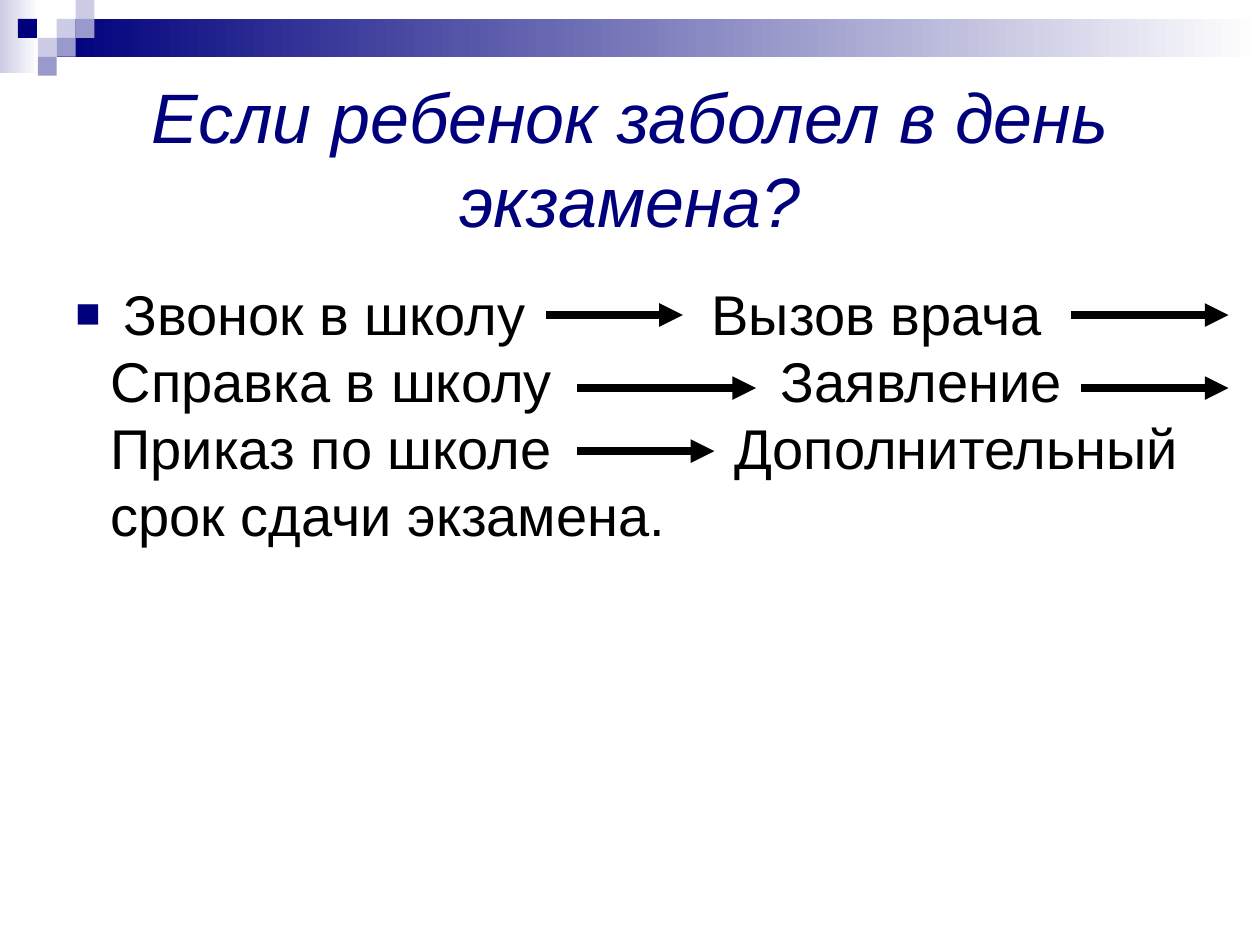
from dataclasses import dataclass

from lxml.etree import SubElement
from pptx import Presentation
from pptx.dml.color import RGBColor
from pptx.enum.shapes import MSO_CONNECTOR as CONN, MSO_SHAPE as SHAPE
from pptx.enum.text import MSO_ANCHOR as ANCHOR, PP_ALIGN as ALIGN
from pptx.oxml.ns import qn
from pptx.util import Inches, Pt

NAVY = RGBColor(0x00, 0x00, 0x7D)
LILAC = RGBColor(0xCC, 0xCC, 0xE6)
VIOLET = RGBColor(0x99, 0x99, 0xCC)
WHITE = RGBColor(0xFF, 0xFF, 0xFF)
BLACK = RGBColor(0x00, 0x00, 0x00)

TILE = 0.15
ROW_TOP = 2.17
ROW_PITCH = 0.53
INSET = 0.1
MARGIN = 0.88


@dataclass
class Step:
    text: str
    x: float
    row: int
    width: float = 4.0
    margin: float = 0
    indent: float = 0
    bullet: bool = False


@dataclass
class Arrow:
    start: float
    end: float
    y: float


STEPS = [
    Step("Звонок в школу", 0.6, 0, margin=0.38, indent=-0.38, bullet=True),
    Step("Вызов врача", 5.65, 0),
    Step("Справка в школу", MARGIN, 1),
    Step("Заявление", 6.2, 1),
    Step("Приказ по школе", MARGIN, 2),
    Step("Дополнительный срок сдачи экзамена.", MARGIN, 2,
         width=8.9, indent=5.83 - MARGIN),
]
ARROWS = [
    Arrow(4.33, 5.42, 2.5),
    Arrow(8.5, 9.75, 2.5),
    Arrow(4.58, 6, 3.08),
    Arrow(8.58, 9.75, 3.08),
    Arrow(4.58, 5.67, 3.58),
]
TILES = [
    (3, 1, LILAC), (4, 0, LILAC), (4, 1, VIOLET), (2, 2, LILAC),
    (0.95, 1, NAVY), (3, 2, VIOLET), (2, 3, VIOLET),
]


def add_rect(s, x: float, y: float, w: float, h: float,
             color: RGBColor, fade: bool = False):
    sp = s.shapes.add_shape(SHAPE.RECTANGLE, Inches(x), Inches(y),
                            Inches(w), Inches(h))
    sp.shadow.inherit = False
    sp.line.fill.background()
    if fade:
        sp.fill.gradient()
        sp.fill.gradient_angle = 0
        for stop, position, rgb in zip(sp.fill.gradient_stops, (0, 1),
                                       (color, WHITE)):
            stop.position = position
            stop.color.rgb = rgb
    else:
        sp.fill.solid()
        sp.fill.fore_color.rgb = color
    return sp


def add_text(s, text: str, x: float, y: float, w: float, h: float, *,
             size: float, color: RGBColor = BLACK, italic: bool = False,
             align=ALIGN.LEFT, anchor=ANCHOR.TOP):
    tf = s.shapes.add_textbox(Inches(x), Inches(y),
                              Inches(w), Inches(h)).text_frame
    tf.word_wrap = True
    tf.vertical_anchor = anchor
    p = tf.paragraphs[0]
    p.alignment = align
    r = p.add_run()
    r.text = text
    r.font.name = "Arial"
    r.font.size = Pt(size)
    r.font.italic = italic
    r.font.color.rgb = color
    return p


def add_step(s, step: Step) -> None:
    p = add_text(s, step.text, step.x - INSET, ROW_TOP + step.row * ROW_PITCH,
                 step.width, 0.6, size=32)
    pPr = p._p.get_or_add_pPr()
    pPr.set("marL", str(Inches(step.margin)))
    pPr.set("indent", str(Inches(step.indent)))
    if step.bullet:
        color = SubElement(pPr, qn("a:buClr"))
        SubElement(color, qn("a:srgbClr"), val=str(NAVY))
        SubElement(pPr, qn("a:buSzPct"), val="75000")
        SubElement(pPr, qn("a:buFont"), typeface="Arial")
        SubElement(pPr, qn("a:buChar"), char="■")


def add_arrow(s, arrow: Arrow) -> None:
    line = s.shapes.add_connector(CONN.STRAIGHT, Inches(arrow.start), Inches(arrow.y),
                                  Inches(arrow.end), Inches(arrow.y))
    line.line.color.rgb = BLACK
    line.line.width = Pt(4.5)
    SubElement(line.line._get_or_add_ln(), qn("a:tailEnd"), type="triangle")
    SubElement(line._element.spPr, qn("a:effectLst"))


def main() -> None:
    prs = Presentation()
    prs.slide_width, prs.slide_height = Inches(10), Inches(7.5)
    s = prs.slides.add_slide(prs.slide_layouts[6])

    add_rect(s, 0, 0, 0.31, 0.58, LILAC, fade=True)
    add_rect(s, 0.45, 0.15, 9.55, 0.3, NAVY, fade=True)
    for col, row, color in TILES:
        add_rect(s, col * TILE, row * TILE, TILE, TILE, color)

    add_text(s, "Если ребенок заболел в день экзамена?", 0.5, 0.5, 9, 1.5,
             size=40, color=NAVY, italic=True,
             align=ALIGN.CENTER, anchor=ANCHOR.MIDDLE)
    for step in STEPS:
        add_step(s, step)
    for arrow in ARROWS:
        add_arrow(s, arrow)

    prs.save("out.pptx")


if __name__ == "__main__":
    main()
